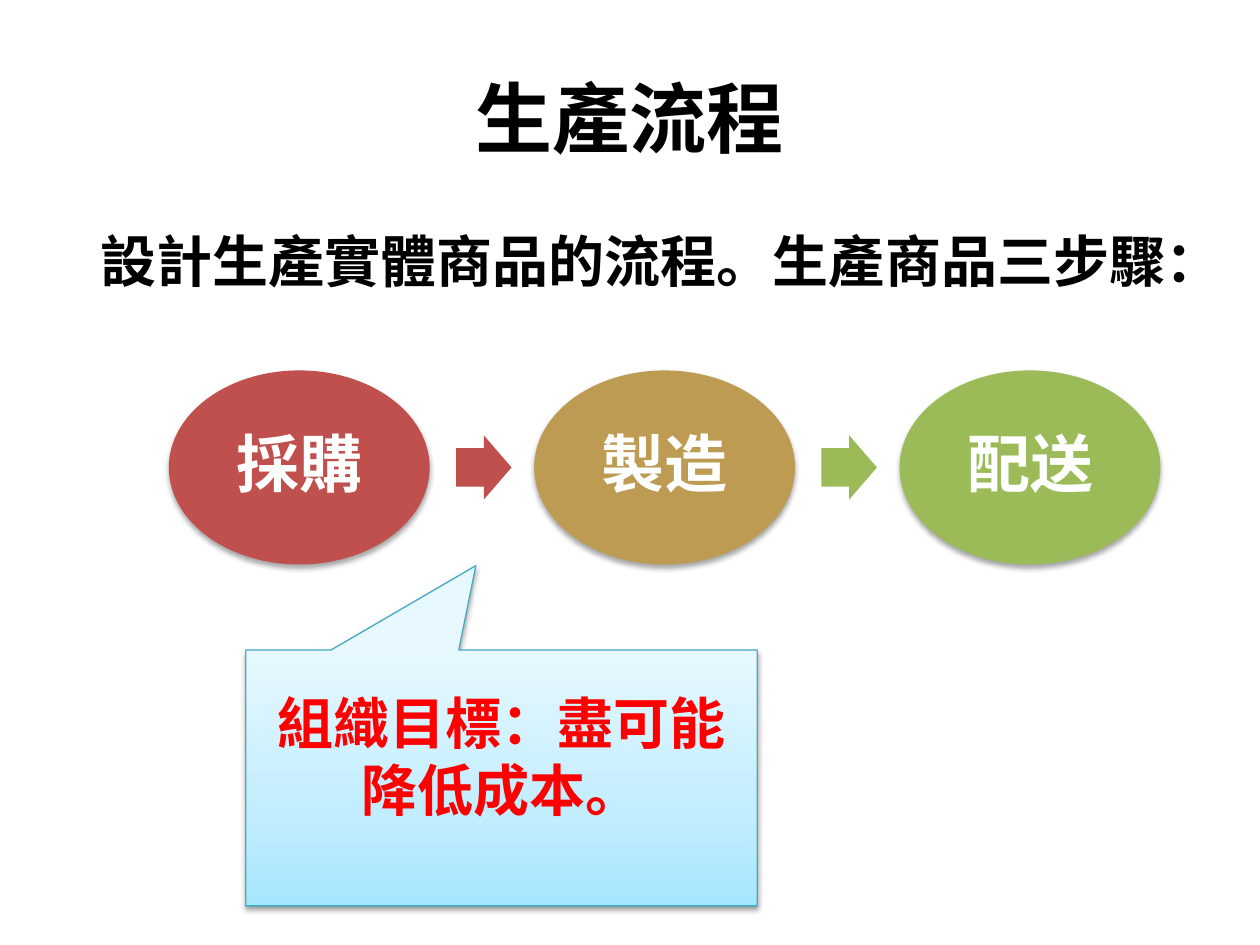
"""Build the production process slide: three steps and a goal callout."""
from copy import deepcopy

from lxml.etree import SubElement
from pptx import Presentation
from pptx.dml.color import RGBColor
from pptx.enum.shapes import MSO_SHAPE
from pptx.enum.text import MSO_ANCHOR, PP_ALIGN
from pptx.oxml.ns import qn
from pptx.util import Inches, Pt

BLACK = RGBColor(0x00, 0x00, 0x00)
WHITE = RGBColor(0xFF, 0xFF, 0xFF)
RED = RGBColor(0xFF, 0x00, 0x00)
BRICK = RGBColor(0xC0, 0x50, 0x4D)
OCHRE = RGBColor(0xBD, 0x9B, 0x53)
GREEN = RGBColor(0x9B, 0xBB, 0x59)
TEAL = RGBColor(0x46, 0xAA, 0xC5)
SKY_STOPS = [
    (0, RGBColor(0xA7, 0xE6, 0xFF)),
    (0.35, RGBColor(0xC1, 0xED, 0xFF)),
    (1, RGBColor(0xE7, 0xF8, 0xFF)),
]
FONT = "Noto Sans CJK SC"
STEPS = [("採購", BRICK), ("製造", OCHRE), ("配送", GREEN)]
STEP_LEFT, STEP_TOP, STEP_PITCH = 1.34, 2.94, 2.9
STEP_WIDTH, STEP_HEIGHT = 2.07, 1.54
ARROW_WIDTH, ARROW_HEIGHT, ARROW_OFFSET = 0.44, 0.51, 2.28


def write(shape, text, size, color, align=PP_ALIGN.CENTER, anchor=MSO_ANCHOR.MIDDLE):
    """Put one bold paragraph in a shape and return the paragraph."""
    frame = shape.text_frame
    frame.text = text
    frame.word_wrap = True
    frame.vertical_anchor = anchor
    paragraph = frame.paragraphs[0]
    paragraph.alignment = align
    font = paragraph.runs[0].font
    font.size, font.bold, font.name = Pt(size), True, FONT
    font.color.rgb = color
    SubElement(paragraph.runs[0]._r.get_or_add_rPr(), qn("a:ea"), typeface=FONT)
    return paragraph


def add_text(slide, box, text, size, **layout):
    """Add a black text box."""
    textbox = slide.shapes.add_textbox(*map(Inches, box))
    write(textbox, text, size, BLACK, **layout)
    return textbox


def add_filled(slide, kind, box, color):
    """Add a plain preset shape without outline or shadow."""
    shape = slide.shapes.add_shape(kind, *map(Inches, box))
    shape.shadow.inherit = False
    shape.fill.solid()
    shape.fill.fore_color.rgb = color
    shape.line.fill.background()
    return shape


def drop_shadow(shape, distance, opacity):
    """Give a shape a soft black shadow straight below it."""
    effects = shape._element.spPr.find(qn("a:effectLst"))
    shadow = SubElement(effects, qn("a:outerShdw"), blurRad=str(Pt(3.1)),
                        dist=str(Pt(distance)), dir="5400000", rotWithShape="0")
    tint = SubElement(shadow, qn("a:srgbClr"), val=str(BLACK))
    SubElement(tint, qn("a:alpha"), val=str(opacity * 1000))


def fill_gradient(shape, stops):
    """Fill a shape from bottom to top with three colour stops."""
    shape.fill.gradient()
    shape.fill.gradient_angle = 90
    stop_list = shape._element.spPr.find(qn("a:gradFill")).find(qn("a:gsLst"))
    stop_list.insert(1, deepcopy(stop_list[0]))
    for stop, (position, color) in zip(shape.fill.gradient_stops, stops):
        stop.position = position
        stop.color.rgb = color


def add_step(slide, index, label, color):
    """Add one process step as a labelled ellipse."""
    box = (STEP_LEFT + index * STEP_PITCH, STEP_TOP, STEP_WIDTH, STEP_HEIGHT)
    step = add_filled(slide, MSO_SHAPE.OVAL, box, color)
    drop_shadow(step, 1.8, 35)
    write(step, label, 36, WHITE).line_spacing = 0.9


def add_step_arrow(slide, index, color):
    """Add the arrow that leads on from a step."""
    left = STEP_LEFT + index * STEP_PITCH + ARROW_OFFSET
    top = STEP_TOP + (STEP_HEIGHT - ARROW_HEIGHT) / 2
    arrow = add_filled(slide, MSO_SHAPE.RIGHT_ARROW,
                       (left, top, ARROW_WIDTH, ARROW_HEIGHT), color)
    arrow.adjustments[0], arrow.adjustments[1] = 0.6, 0.5


def add_goal(slide, text):
    """Add the callout that states the goal of the organisation."""
    goal = add_filled(slide, MSO_SHAPE.RECTANGULAR_CALLOUT, (1.95, 5.16, 4.06, 2.03), WHITE)
    goal.adjustments[0], goal.adjustments[1] = -0.05, -0.83
    fill_gradient(goal, SKY_STOPS)
    goal.line.color.rgb = TEAL
    goal.line.width = Pt(0.75)
    drop_shadow(goal, 1.6, 38)
    write(goal, text, 32, RED)
    goal.text_frame.margin_bottom = Inches(0.41)


def main():
    """Build and save the slide."""
    presentation = Presentation()
    presentation.slide_width, presentation.slide_height = Inches(10), Inches(7.5)
    slide = presentation.slides.add_slide(presentation.slide_layouts[6])
    add_text(slide, (0.5, 0.3, 9, 1.25), "生產流程", 44)
    intro = add_text(slide, (0.5, 1.75, 9.27, 4.95), "設計生產實體商品的流程。生產商品三步驟：", 32,
                     align=PP_ALIGN.LEFT, anchor=MSO_ANCHOR.TOP)
    intro.text_frame.margin_left, intro.text_frame.margin_right = Inches(0.3), 0
    add_goal(slide, "組織目標：盡可能降低成本。")
    for index, (label, color) in enumerate(STEPS):
        add_step(slide, index, label, color)
    for index, color in enumerate((BRICK, GREEN)):
        add_step_arrow(slide, index, color)
    presentation.save("out.pptx")


if __name__ == "__main__":
    main()
